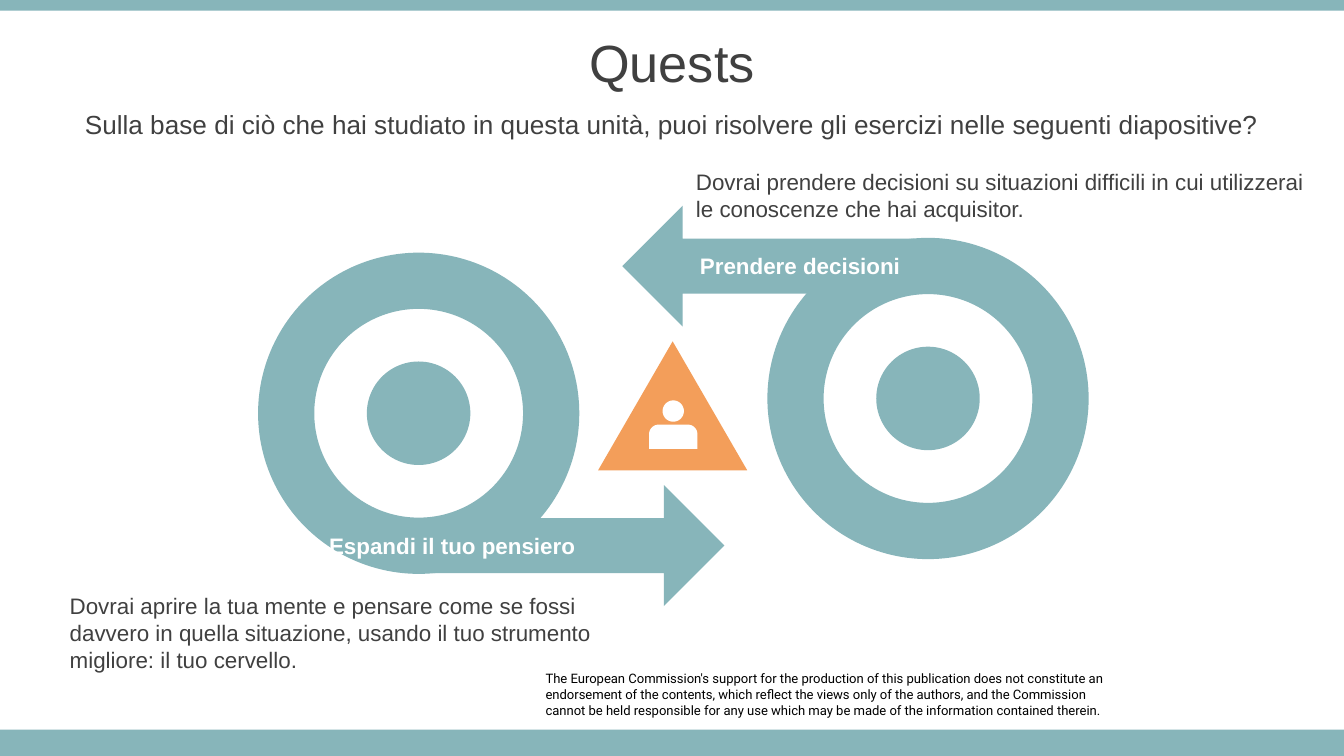
from math import cos, pi, sin

from pptx import Presentation
from pptx.dml.color import RGBColor
from pptx.enum.shapes import MSO_SHAPE as SHAPE
from pptx.enum.text import MSO_ANCHOR as ANCHOR, PP_ALIGN as ALIGN
from pptx.util import Inches, Pt

TEAL, ORANGE, WHITE, GREY, BLACK = "87B5BA", "F39E5A", "FFFFFF", "404040", "000000"


def rgb(value):
    """Turn a hex string into a colour."""
    return RGBColor.from_string(value)


def paint(sp, color):
    """Give a shape a flat fill with no line or shadow."""
    sp.shadow.inherit = False
    sp.fill.solid()
    sp.fill.fore_color.rgb = rgb(color)
    sp.line.fill.background()


def add_shape(shapes, kind, x, y, w, h, color, adjustments=()):
    """Add a flat preset shape."""
    sp = shapes.add_shape(kind, Inches(x), Inches(y), Inches(w), Inches(h))
    for i, value in enumerate(adjustments):
        sp.adjustments[i] = value
    paint(sp, color)
    return sp


def add_text(s, x, y, w, h, lines, size, color=GREY, font="Arial", bold=False,
             align=ALIGN.LEFT, anchor=ANCHOR.TOP):
    """Add a wrapped text box with one paragraph for each line."""
    tf = s.shapes.add_textbox(Inches(x), Inches(y), Inches(w), Inches(h)).text_frame
    tf.word_wrap = True
    tf.vertical_anchor = anchor
    for i, line in enumerate(lines):
        p = tf.paragraphs[0] if i == 0 else tf.add_paragraph()
        p.text = line
        p.alignment = align
        p.font.size, p.font.name, p.font.bold = Pt(size), font, bold
        p.font.color.rgb = rgb(color)
    return tf


def add_frame(s):
    """Place the top and bottom bars and the disclaimer."""
    tf = add_text(s, 4.06, 4.99, 4.17, 0.35, [
        "The European Commission's support for the production of this publication does not "
        "constitute an endorsement of the contents, which reflect the views only of the "
        "authors, and the Commission",
        "cannot be held responsible for any use which may be made of the information "
        "contained therein."], 7, BLACK, "Roboto")
    tf.margin_left = tf.margin_right = tf.margin_top = tf.margin_bottom = 0
    add_shape(s.shapes, SHAPE.RECTANGLE, 0, 5.43, 10, 0.2, TEAL)
    add_shape(s.shapes, SHAPE.RECTANGLE, 0, 0, 10, 0.08, TEAL)


def add_heading(s, x, y, w):
    """Place the title and subtitle."""
    style = {"align": ALIGN.CENTER, "anchor": ANCHOR.MIDDLE}
    add_text(s, x, y, w, 0.63, ["Quests"], 28, **style)
    add_text(s, x, y + 0.63, w, 0.31, [
        "Sulla base di ciò che hai studiato in questa unità, puoi risolvere gli esercizi "
        "nelle seguenti diapositive?"], 14, **style)


def add_target(s, x, y, flipped=False):
    """Place a ring with a core and an arrow, turned half round if flipped."""
    size, core, arrow_w, arrow_h = 2.39, 0.77, 2.17, 0.9
    dx, dy = 1.3, 1.73
    if flipped:
        dx, dy = size - dx - arrow_w, size - dy - arrow_h
    shapes = s.shapes.add_group_shape().shapes
    add_shape(shapes, SHAPE.DONUT, x, y, size, size, TEAL, [0.175])
    arrow = add_shape(shapes, SHAPE.RIGHT_ARROW, x + dx, y + dy, arrow_w, arrow_h,
                      TEAL, [0.455, 0.5])
    arrow.rotation = 180 if flipped else 0
    inset = (size - core) / 2
    add_shape(shapes, SHAPE.OVAL, x + inset, y + inset, core, core, TEAL)


def arc(cx, cy, radius, start, end, steps):
    """List points along an arc, with angles in half turns."""
    angles = [pi * (start + (end - start) * i / steps) for i in range(steps + 1)]
    return [(cx + radius * cos(a), cy + radius * sin(a)) for a in angles]


def add_person(s, x, y, size):
    """Draw a head and shoulders as one outline."""
    r, shoulder = size * 0.2, size / 2
    body = (arc(x + r, y + shoulder + r, r, 1, 1.5, 12)
            + arc(x + size - r, y + shoulder + r, r, 1.5, 2, 12)
            + [(x + size, y + size), (x, y + size)])
    head = arc(x + size / 2, y + size * 0.22, size * 0.22, 0, 2, 48)
    body, head = ([(Inches(px), Inches(py)) for px, py in part] for part in (body, head))
    fb = s.shapes.build_freeform(*body[0])
    fb.add_line_segments(body[1:])
    fb.move_to(*head[0])
    fb.add_line_segments(head[1:])
    paint(fb.convert_to_shape(), WHITE)


def add_badge(s, x, y):
    """Place the triangle with the person in it."""
    add_shape(s.shapes, SHAPE.ISOSCELES_TRIANGLE, x, y, 1.11, 0.96, ORANGE)
    add_person(s, x + 0.38, y + 0.44, 0.36)


def add_captions(s):
    """Place the explanations and the arrow labels."""
    add_text(s, 5.08, 1.2, 4.74, 0.5, [
        "Dovrai prendere decisioni su situazioni difficili in cui utilizzerai le conoscenze "
        "che hai acquisitor."], 12)
    add_text(s, 0.42, 4.36, 4.41, 0.91, [
        "Dovrai aprire la tua mente e pensare come se fossi davvero in quella situazione, "
        "usando il tuo strumento migliore: il tuo cervello."], 12)
    for x, y, label in ((2.35, 3.91, "Espandi il tuo pensiero"),
                        (5.11, 1.83, "Prendere decisioni")):
        add_text(s, x, y, 2.56, 0.5, [label], 12, WHITE, bold=True)


def main():
    """Build the slide and save it."""
    prs = Presentation()
    prs.slide_width = Inches(10)
    prs.slide_height = prs.slide_width * 9 // 16
    s = prs.slides.add_slide(prs.slide_layouts[6])
    add_frame(s)
    add_heading(s, 0, 0.14, 10)
    add_target(s, 1.92, 1.88)
    add_target(s, 5.71, 1.77, flipped=True)
    add_badge(s, 4.45, 2.54)
    add_captions(s)
    prs.save("out.pptx")


if __name__ == "__main__":
    main()
